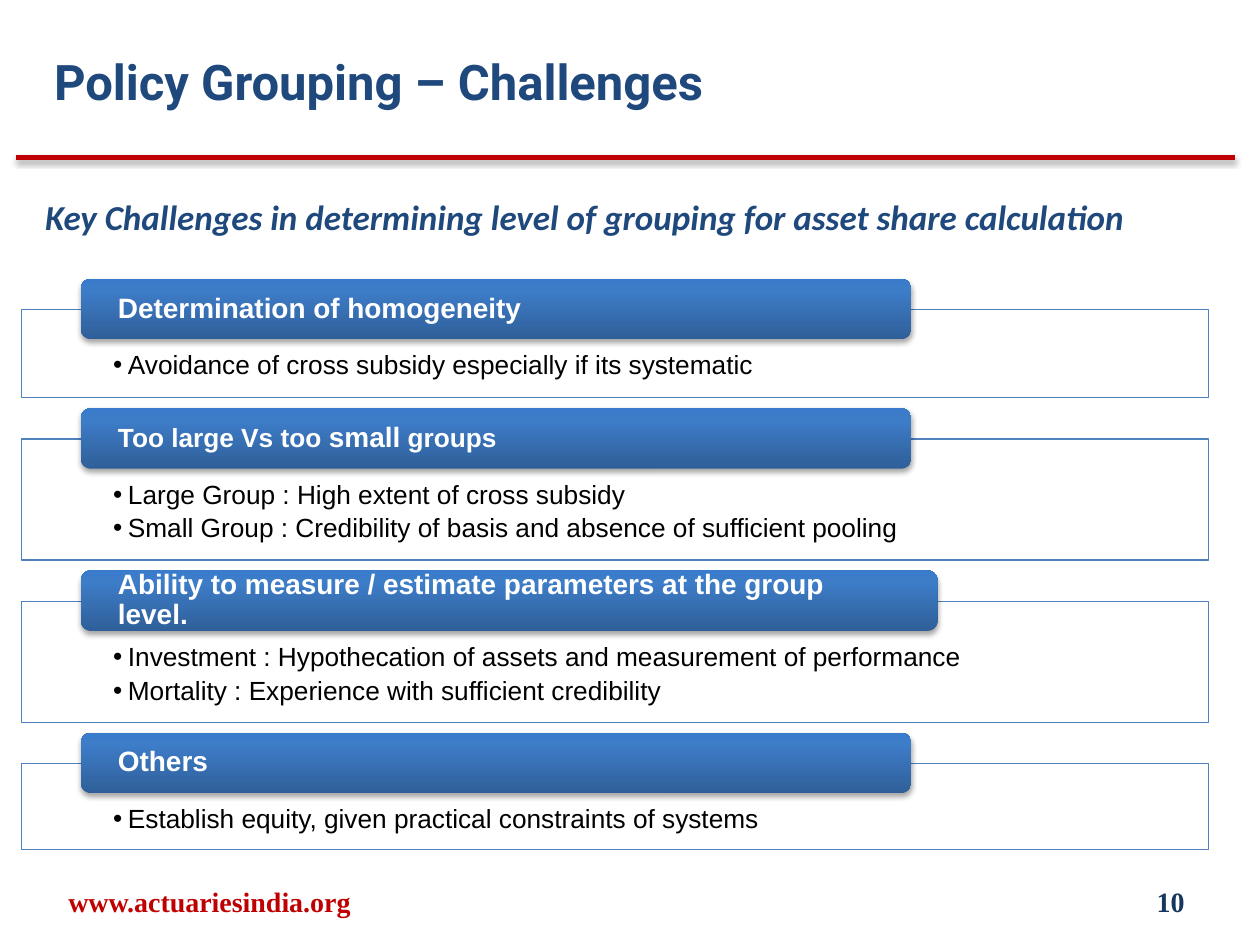
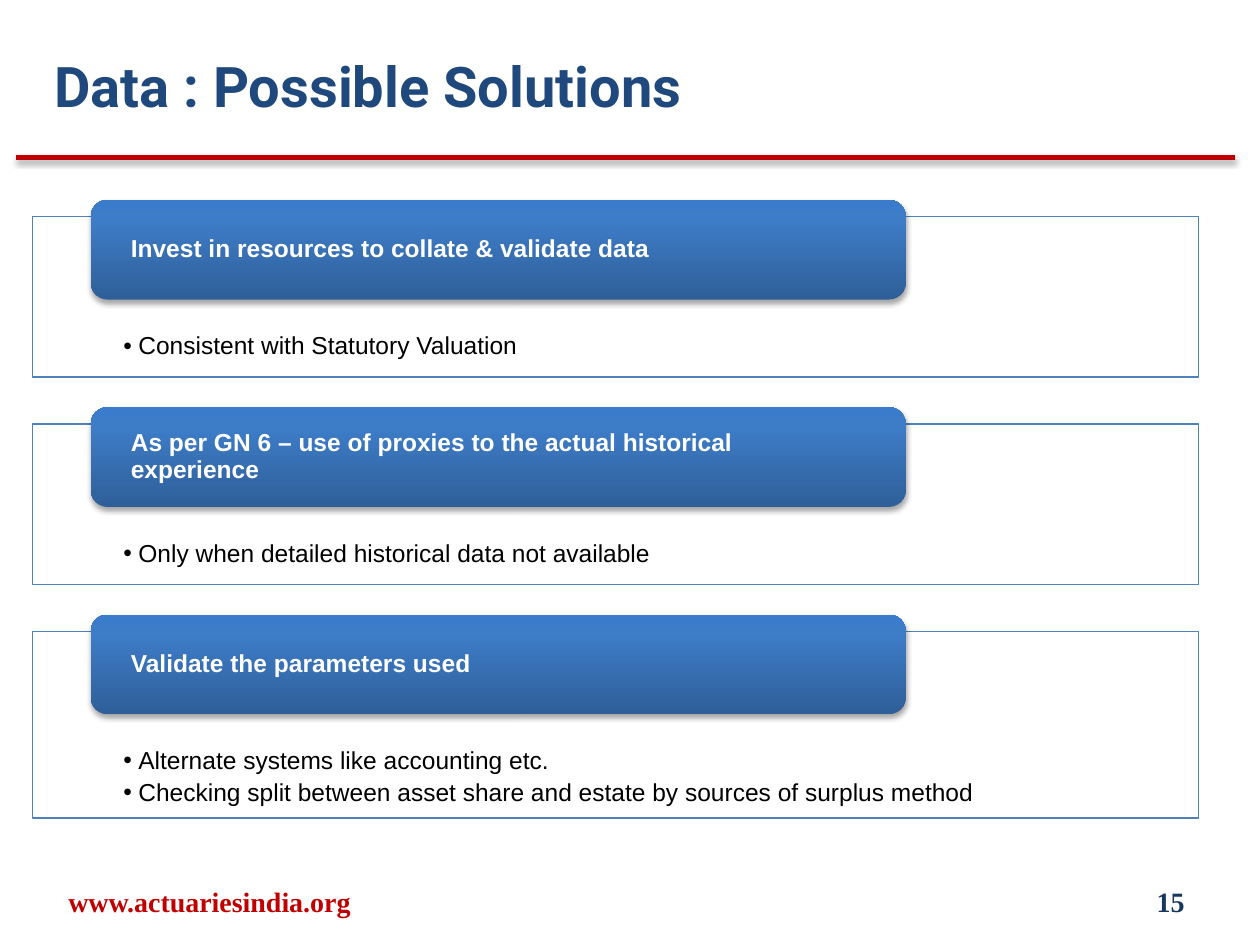
from lxml import etree
from pptx import Presentation
from pptx import util as u
from pptx.dml import color as dml
from pptx.enum import shapes, text
from pptx.oxml import ns

NAVY, RED, BLUE, WHITE, BLACK = "1F497D", "C00000", "4F81BD", "FFFFFF", "000000"
PAGE_NAVY = "17375E"
HEADER_STOPS = [(0, "2F5F99"), (80, "3D7CC7"), (100, "3A7CCB")]
WEBSITE = "www.actuariesindia.org"

PAGES = [
    {
        "title": "Policy Grouping – Challenges", "title_size": 28, "number": "10",
        "lead": "Key Challenges in determining level of grouping for asset share calculation",
        "layout": {
            "left": 0.43, "top": 6.24, "width": 23.93, "gap": 0.83,
            "header_left": 1.63, "header_height": 1.22, "header_rise": 0.62,
            "header_inset": 0.69, "point_insets": (1.85, 0.86, 1.85, 0.3), "point_size": 15,
        },
        "topics": [
            (1.78, 16.74, [("Determination of homogeneity", 16)],
             ["Avoidance of cross subsidy especially if its systematic"]),
            (2.44, 16.74, [("Too large Vs too ", 15), ("small", 16), (" groups", 15)],
             ["Large Group : High extent of cross subsidy",
              "Small Group : Credibility of basis and absence of sufficient pooling"]),
            (2.44, 17.27, [("Ability to measure / estimate parameters at the group level.", 16)],
             ["Investment : Hypothecation of assets and measurement of performance",
              "Mortality : Experience with sufficient credibility"]),
            (1.73, 16.74, [("Others", 16)],
             ["Establish equity, given practical constraints of systems"]),
        ],
    },
    {
        "title": "Data : Possible Solutions", "title_size": 32, "number": "15",
        "lead": None,
        "layout": {
            "left": 0.66, "top": 4.37, "width": 23.5, "gap": 0.95,
            "header_left": 1.83, "header_height": 2.01, "header_rise": 0.34,
            "header_inset": 0.71, "point_insets": (1.83, 2.36, 1.83, 0.28), "point_size": 14,
        },
        "topics": [
            (3.23, 16.43, [("Invest in resources to collate & validate data", 14)],
             ["Consistent with Statutory Valuation"]),
            (3.23, 16.43,
             [("As per GN 6 – use of proxies to the actual historical experience", 14)],
             ["Only when detailed historical data not available"]),
            (3.76, 16.43, [("Validate the parameters used", 14)],
             ["Alternate systems like accounting etc.",
              "Checking split between asset share and estate by sources of surplus method"]),
        ],
    },
]


def rgb(value):
    return dml.RGBColor.from_string(value)


def box(left, top, width, height):
    return [u.Cm(side) for side in (left, top, width, height)]


def apply(target, **values):
    for name, value in values.items():
        setattr(target, name, value)


def child(parent, tag, **attributes):
    element = etree.SubElement(parent, ns.qn(tag))
    for name, value in attributes.items():
        element.set(name, str(value))
    return element


def write(paragraph, words, size, color, font="Arial", **style):
    run = paragraph.add_run()
    run.text = words
    apply(run.font, name=font, size=u.Pt(size), **style)
    run.font.color.rgb = rgb(color)


def prepare(frame, insets, anchor):
    sides = ("margin_left", "margin_top", "margin_right", "margin_bottom")
    apply(frame, word_wrap=True, vertical_anchor=anchor,
          **{side: u.Cm(inset) for side, inset in zip(sides, insets)})


def add_label(slide, place, words, size, color, font, align=text.PP_ALIGN.LEFT,
              anchor=text.MSO_ANCHOR.TOP, top_inset=0.13, **style):
    frame = slide.shapes.add_textbox(*box(*place)).text_frame
    prepare(frame, (0.25, top_inset, 0.25, 0.13), anchor)
    frame.paragraphs[0].alignment = align
    write(frame.paragraphs[0], words, size, color, font, bold=True, **style)


def add_shadow(effects, distance, opacity):
    shadow = child(effects, "a:outerShdw", blurRad=u.Pt(3.1), dist=u.Pt(distance),
                   dir=5400000, rotWithShape=0)
    child(child(shadow, "a:srgbClr", val=BLACK), "a:alpha", val=opacity * 1000)


def add_bullet(paragraph):
    properties = paragraph._p.get_or_add_pPr()
    properties.set("marL", str(u.Cm(0.3)))
    properties.set("indent", str(-u.Cm(0.3)))
    child(properties, "a:buFont", typeface="Arial")
    child(properties, "a:buChar", char="•")


def add_points(slide, layout, top, height, points):
    panel = slide.shapes.add_shape(shapes.MSO_SHAPE.RECTANGLE,
                                   *box(layout["left"], top, layout["width"], height))
    panel.shadow.inherit = False
    panel.fill.solid()
    panel.fill.fore_color.rgb = rgb(WHITE)
    panel.line.color.rgb = rgb(BLUE)
    panel.line.width = u.Pt(0.75)
    frame = panel.text_frame
    prepare(frame, layout["point_insets"], text.MSO_ANCHOR.TOP)
    size = layout["point_size"]
    for index, point in enumerate(points):
        paragraph = frame.add_paragraph() if index else frame.paragraphs[0]
        add_bullet(paragraph)
        apply(paragraph, alignment=text.PP_ALIGN.LEFT, line_spacing=0.9,
              space_after=u.Pt(size * 0.2))
        write(paragraph, point, size, BLACK)


def add_header(slide, layout, top, width, runs):
    header = slide.shapes.add_shape(
        shapes.MSO_SHAPE.ROUNDED_RECTANGLE,
        *box(layout["header_left"], top - layout["header_rise"], width, layout["header_height"]))
    header.line.fill.background()
    header.shadow.inherit = False
    properties = header._element.spPr
    gradient = etree.Element(ns.qn("a:gradFill"), rotWithShape="1")
    stops = child(gradient, "a:gsLst")
    for position, color in HEADER_STOPS:
        child(child(stops, "a:gs", pos=position * 1000), "a:srgbClr", val=color)
    child(gradient, "a:lin", ang=270 * 60000, scaled=0)
    properties.find(ns.qn("a:prstGeom")).addnext(gradient)
    add_shadow(properties.find(ns.qn("a:effectLst")), 1.8, 35)
    frame = header.text_frame
    inset = layout["header_inset"]
    prepare(frame, (inset, 0, inset, 0), text.MSO_ANCHOR.MIDDLE)
    apply(frame.paragraphs[0], alignment=text.PP_ALIGN.LEFT, line_spacing=0.9)
    for words, size in runs:
        write(frame.paragraphs[0], words, size, WHITE, bold=True)


def add_common(slide, page):
    rule = slide.shapes.add_connector(shapes.MSO_CONNECTOR.STRAIGHT,
                                      *box(0.33, 3.18, 24.89, 3.18))
    rule.line.color.rgb = rgb(RED)
    rule.line.width = u.Pt(3)
    add_shadow(child(rule._element.spPr, "a:effectLst"), 1.6, 38)
    footer = {"size": 16, "font": "Times New Roman", "anchor": text.MSO_ANCHOR.MIDDLE}
    add_label(slide, (0.2, 17.65, 8.05, 1.02), WEBSITE, color=RED,
              align=text.PP_ALIGN.CENTER, **footer)
    add_label(slide, (18.21, 17.65, 5.92, 1.02), page["number"], color=PAGE_NAVY,
              align=text.PP_ALIGN.RIGHT, **footer)
    add_label(slide, (0.84, 0.84, 21.59, 1.7), page["title"], page["title_size"],
              NAVY, "Roboto", top_inset=0.2)


def build_page(deck, page):
    slide = deck.slides.add_slide(deck.slide_layouts[6])
    add_common(slide, page)
    if page["lead"]:
        add_label(slide, (0.66, 3.81, 22.83, 1.88), page["lead"], 20, NAVY, "Calibri",
                  italic=True)
    layout = page["layout"]
    top = layout["top"]
    for height, header_width, header, points in page["topics"]:
        add_points(slide, layout, top, height, points)
        add_header(slide, layout, top, header_width, header)
        top += height + layout["gap"]


def main():
    deck = Presentation()
    apply(deck, slide_width=u.Cm(25.4), slide_height=u.Cm(19.05))
    for page in PAGES:
        build_page(deck, page)
    deck.save("out.pptx")


if __name__ == "__main__":
    main()
